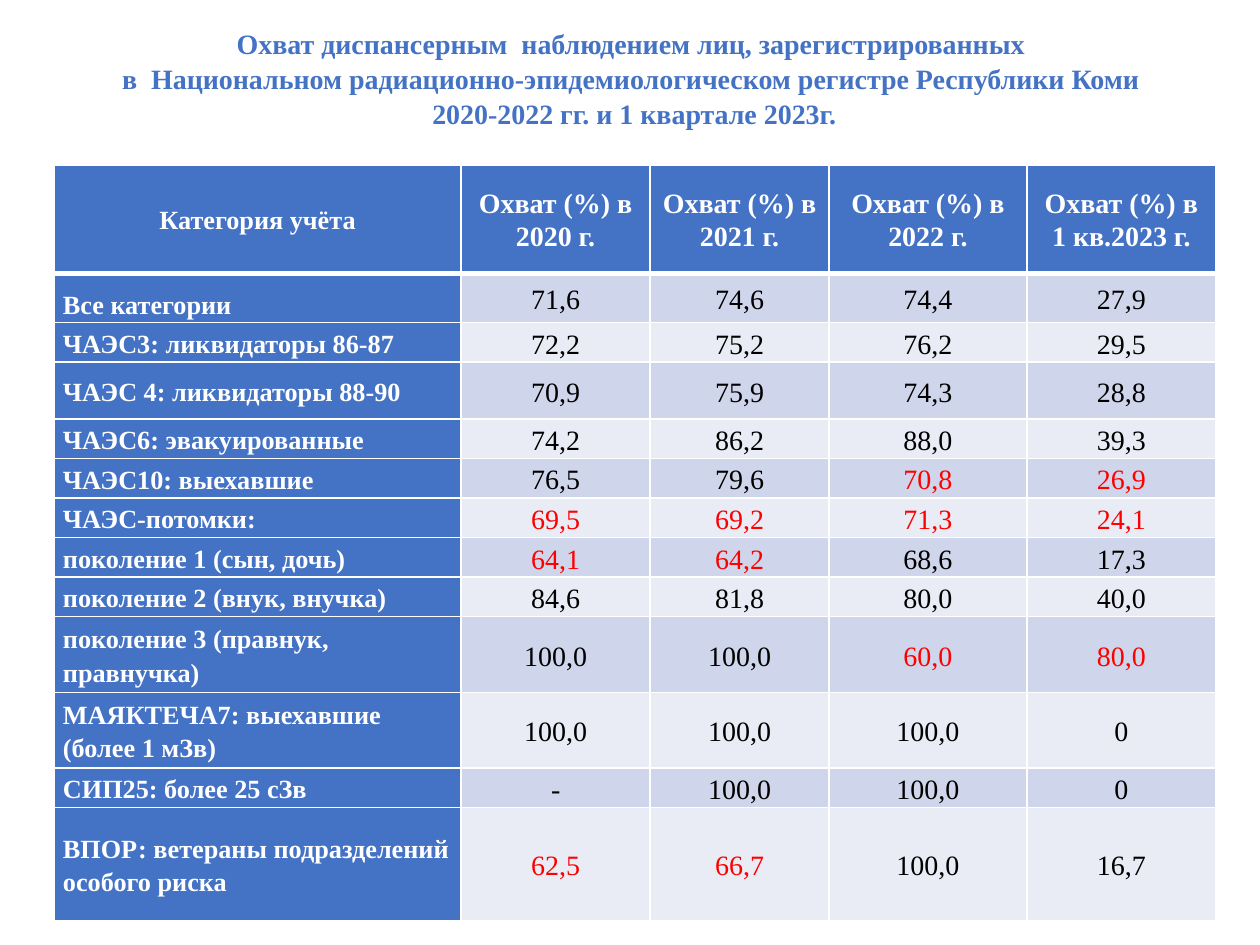
"""Build the slide on follow-up coverage in the Komi radiation registry."""
from lxml import etree
from pptx import Presentation
from pptx.dml.color import RGBColor
from pptx.enum.text import MSO_ANCHOR, MSO_AUTO_SIZE, PP_ALIGN
from pptx.oxml.ns import qn
from pptx.util import Inches, Pt

TOP, MIDDLE = MSO_ANCHOR.TOP, MSO_ANCHOR.MIDDLE
LEFT, CENTER = PP_ALIGN.LEFT, PP_ALIGN.CENTER
NO_AUTOFIT = MSO_AUTO_SIZE.NONE
BLUE = RGBColor(0x44, 0x72, 0xC4)
WHITE = RGBColor(0xFF, 0xFF, 0xFF)
BLACK = RGBColor(0, 0, 0)
RED = RGBColor(0xFF, 0, 0)
BANDS = [RGBColor(0xE9, 0xEB, 0xF5), RGBColor(0xCF, 0xD5, 0xEA)]
FONT = "Times New Roman"

TITLE_LINES = [
    "Охват диспансерным  наблюдением лиц, зарегистрированных ",
    "в  Национальном радиационно-эпидемиологическом регистре Республики Коми ",
    "2020-2022 гг. и 1 квартале 2023г.",
]
HEADERS = ["Категория учёта"] + [
    f"Охват (%) в {period} г." for period in ("2020", "2021", "2022", "1 кв.2023")
]
CATEGORIES = [
    ("Все категории", "71,6", "74,6", "74,4", "27,9"),
    ("ЧАЭС3: ликвидаторы 86-87", "72,2", "75,2", "76,2", "29,5"),
    ("ЧАЭС 4: ликвидаторы 88-90", "70,9", "75,9", "74,3", "28,8"),
    ("ЧАЭС6: эвакуированные", "74,2", "86,2", "88,0", "39,3"),
    ("ЧАЭС10: выехавшие", "76,5", "79,6", "70,8", "26,9"),
    ("ЧАЭС-потомки:", "69,5", "69,2", "71,3", "24,1"),
    ("поколение 1 (сын, дочь)", "64,1", "64,2", "68,6", "17,3"),
    ("поколение 2 (внук, внучка)", "84,6", "81,8", "80,0", "40,0"),
    ("поколение 3 (правнук, правнучка)", "100,0", "100,0", "60,0", "80,0"),
    ("МАЯКТЕЧА7: выехавшие (более 1 мЗв)", "100,0", "100,0", "100,0", "0"),
    ("СИП25: более 25 сЗв", "-", "100,0", "100,0", "0"),
    ("ВПОР: ветераны подразделений особого риска", "62,5", "66,7", "100,0", "16,7"),
]
RED_COLUMNS = {5: (3, 4), 6: (1, 2, 3, 4), 7: (1, 2), 9: (3, 4), 12: (1, 2)}

MARGIN, CONTENT_WIDTH = 0.43, 9.21
TITLE_TOP, TITLE_HEIGHT = 0.2, 1.01
TABLE_TOP, TABLE_HEIGHT = 1.31, 6
COLUMN_WIDTHS = [3.23, 1.5, 1.42, 1.57, 1.5]
TALL_ROWS = {0: 0.86, 1: 0.39, 3: 0.45, 9: 0.6, 10: 0.6, 12: 0.9}


def add_text(paragraph, text, size, color, bold):
    run = paragraph.add_run()
    run.text = text
    run.font.name = FONT
    run.font.size = Pt(size)
    run.font.bold = bold
    run.font.color.rgb = color


def add_borders(cell, bottom_width):
    properties = cell._tc.get_or_add_tcPr()
    for side, width in (("L", 1), ("R", 1), ("T", 1), ("B", bottom_width)):
        line = etree.SubElement(properties, qn(f"a:ln{side}"), w=str(Pt(width)))
        fill = etree.SubElement(line, qn("a:solidFill"))
        etree.SubElement(fill, qn("a:srgbClr"), val=str(WHITE))


def fill_cell(cell, row, column, text):
    header, label = row == 0, column == 0
    cell.margin_left = cell.margin_right = Inches(0.07)
    cell.margin_top = cell.margin_bottom = 0
    cell.vertical_anchor = MIDDLE
    add_borders(cell, 3 if header else 1)
    cell.fill.solid()
    cell.fill.fore_color.rgb = BLUE if header or label else BANDS[row % 2]
    if header or label:
        color = WHITE
    else:
        color = RED if column in RED_COLUMNS.get(row, ()) else BLACK
    paragraph = cell.text_frame.paragraphs[0]
    paragraph.alignment = LEFT if label and not header else CENTER
    if header:
        paragraph.line_spacing = 1.07
    else:
        paragraph.line_spacing = 1.5 if label and row == 1 else 1.15
    add_text(paragraph, text, 15 if label else 16, color, header or label)


def add_title(slide):
    title = slide.shapes.title
    title.left, title.top = Inches(MARGIN), Inches(TITLE_TOP)
    title.width, title.height = Inches(CONTENT_WIDTH), Inches(TITLE_HEIGHT)
    frame = title.text_frame
    frame.word_wrap, frame.auto_size = True, NO_AUTOFIT
    frame.vertical_anchor = TOP
    frame.margin_top = frame.margin_bottom = 0
    paragraph = frame.paragraphs[0]
    paragraph.alignment = CENTER
    paragraph.line_spacing = 1.04
    for index, line in enumerate(TITLE_LINES):
        if index:
            paragraph.add_line_break()
        add_text(paragraph, line, 16, BLUE, True)


def add_coverage_table(slide):
    rows = [HEADERS, *CATEGORIES]
    table = slide.shapes.add_table(
        len(rows), len(HEADERS), Inches(MARGIN), Inches(TABLE_TOP),
        Inches(CONTENT_WIDTH), Inches(TABLE_HEIGHT),
    ).table
    table.horz_banding = False
    for column, width in zip(table.columns, COLUMN_WIDTHS):
        column.width = Inches(width)
    plain_height = (TABLE_HEIGHT - sum(TALL_ROWS.values())) / (len(rows) - len(TALL_ROWS))
    for row, texts in enumerate(rows):
        table.rows[row].height = Inches(TALL_ROWS.get(row, plain_height))
        for column, text in enumerate(texts):
            fill_cell(table.cell(row, column), row, column, text)


def main():
    presentation = Presentation()
    presentation.slide_width, presentation.slide_height = Inches(10), Inches(7.5)
    slide = presentation.slides.add_slide(presentation.slide_layouts[5])
    add_title(slide)
    add_coverage_table(slide)
    presentation.save("out.pptx")


if __name__ == "__main__":
    main()
